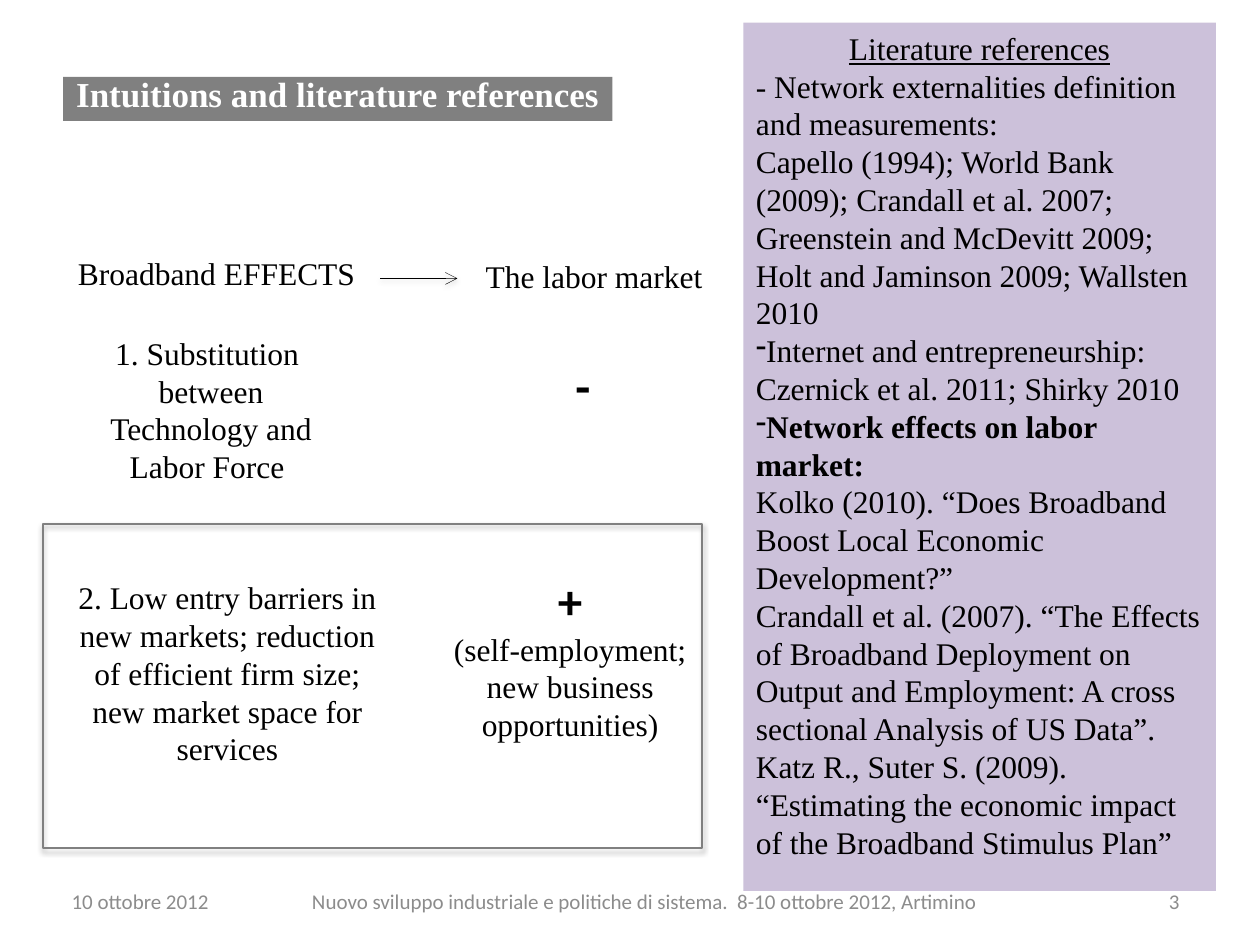
import lxml.etree
import pptx
import pptx.dml.color
import pptx.enum.shapes
import pptx.enum.text
import pptx.oxml.ns
import pptx.util

BLACK = pptx.dml.color.RGBColor(0x00, 0x00, 0x00)
WHITE = pptx.dml.color.RGBColor(0xFF, 0xFF, 0xFF)
GRAY = pptx.dml.color.RGBColor(0x80, 0x80, 0x80)
FOOTER_GRAY = pptx.dml.color.RGBColor(0x8C, 0x8C, 0x8C)
LILAC = pptx.dml.color.RGBColor(0xCC, 0xC1, 0xDA)

LEFT = pptx.enum.text.PP_ALIGN.LEFT
CENTER = pptx.enum.text.PP_ALIGN.CENTER
RIGHT = pptx.enum.text.PP_ALIGN.RIGHT
TOP = pptx.enum.text.MSO_ANCHOR.TOP
MIDDLE = pptx.enum.text.MSO_ANCHOR.MIDDLE
BOTTOM = pptx.enum.text.MSO_ANCHOR.BOTTOM
RECTANGLE = pptx.enum.shapes.MSO_SHAPE.RECTANGLE

BODY = {"name": "Times New Roman", "size": pptx.util.Pt(18), "color": BLACK}
TITLE = {**BODY, "size": pptx.util.Pt(20), "bold": True, "color": WHITE}
SIGN = {"name": "Calibri", "size": pptx.util.Pt(28), "bold": True, "color": BLACK}
FOOTER = {"name": "Calibri", "size": pptx.util.Pt(12), "color": FOOTER_GRAY}
HEADING = {**BODY, "underline": True}
STRONG = {**BODY, "bold": True}

presentation = pptx.Presentation()
presentation.slide_width = pptx.util.Inches(10)
presentation.slide_height = pptx.util.Inches(7.5)
column = presentation.slide_width / 100
row = presentation.slide_height / 75
slide = presentation.slides.add_slide(presentation.slide_layouts[5])


def place(left, top, width, height):
    return [round(left * column), round(top * row), round(width * column), round(height * row)]


def write(shape, paragraphs, alignment, anchor=TOP):
    frame = shape.text_frame
    frame.word_wrap = True
    frame.auto_size = pptx.enum.text.MSO_AUTO_SIZE.NONE
    frame.vertical_anchor = anchor
    for index, (text, style) in enumerate(paragraphs):
        paragraph = frame.add_paragraph() if index else frame.paragraphs[0]
        paragraph.alignment = alignment
        run = paragraph.add_run()
        run.text = text
        for name, value in style.items():
            if name == "color":
                run.font.color.rgb = value
            else:
                setattr(run.font, name, value)


title = slide.shapes.title
title.left, title.top, title.width, title.height = place(5, 6.1, 43.6, 3.5)
title.fill.solid()
title.fill.fore_color.rgb = GRAY
write(title, [("Intuitions and literature references ", TITLE)], CENTER, BOTTOM)

text_boxes = [
    (4.7, 69.5, 23.3, 4, LEFT, MIDDLE, [("10 ottobre 2012", FOOTER)]),
    (21.7, 69.5, 58.9, 4, CENTER, MIDDLE,
     [("Nuovo sviluppo industriale e politiche di sistema.  8-10 ottobre 2012, Artimino", FOOTER)]),
    (71.3, 69.5, 23.3, 4, RIGHT, MIDDLE, [("3", FOOTER)]),
    (5.2, 19.7, 26.9, 4, LEFT, TOP, [("Broadband EFFECTS", BODY)]),
    (33.7, 19.9, 26.9, 4, CENTER, TOP, [("The labor market", BODY)]),
    (7.5, 26, 18.5, 13.1, CENTER, TOP,
     [("1. Substitution  between", BODY), ("Technology and Labor Force ", BODY)]),
    (34.3, 27.7, 23.9, 5.7, CENTER, TOP, [("-", SIGN)]),
    (5.1, 45.4, 25.9, 16.2, CENTER, TOP,
     [("2. Low entry barriers in new markets; reduction of efficient firm size;", BODY),
      ("new market space for services", BODY)]),
    (33.3, 44.8, 23.9, 14.8, CENTER, TOP,
     [("+", SIGN), ("(self-employment; new business opportunities)", BODY)]),
]
for left, top, width, height, alignment, anchor, paragraphs in text_boxes:
    text_box = slide.shapes.add_textbox(*place(left, top, width, height))
    write(text_box, paragraphs, alignment, anchor)

start_x, start_y, length, rise = place(30.2, 22.1, 6.1, 0)
arrow = slide.shapes.add_connector(
    pptx.enum.shapes.MSO_CONNECTOR.STRAIGHT, start_x, start_y, start_x + length, start_y + rise)
arrow.line.color.rgb = BLACK
arrow.line.width = pptx.util.Pt(0.25)
lxml.etree.SubElement(arrow.line._get_or_add_ln(), pptx.oxml.ns.qn("a:tailEnd"), type="arrow")

effect_box = slide.shapes.add_shape(RECTANGLE, *place(3.4, 41.6, 52.3, 25.7))
effect_box.fill.background()
effect_box.line.color.rgb = GRAY
effect_box.line.width = pptx.util.Pt(1)

for shape, distance, opacity in [(arrow, 1.6, 38), (effect_box, 1.8, 35)]:
    effects = lxml.etree.SubElement(shape._element.spPr, pptx.oxml.ns.qn("a:effectLst"))
    shadow = lxml.etree.SubElement(
        effects, pptx.oxml.ns.qn("a:outerShdw"), blurRad=str(pptx.util.Pt(3.1)),
        dist=str(pptx.util.Pt(distance)), dir="5400000", rotWithShape="0")
    color = lxml.etree.SubElement(shadow, pptx.oxml.ns.qn("a:srgbClr"), val=str(BLACK))
    lxml.etree.SubElement(color, pptx.oxml.ns.qn("a:alpha"), val=str(opacity * 1000))

references = slide.shapes.add_shape(RECTANGLE, *place(59, 1.8, 37.5, 68.9))
references.shadow.inherit = False
references.fill.solid()
references.fill.fore_color.rgb = LILAC
references.line.fill.background()
write(references, [
    ("Literature references", HEADING),
    ("- Network externalities definition and measurements:", BODY),
    ("Capello (1994); World Bank (2009); Crandall et al. 2007; Greenstein and McDevitt 2009; "
     "Holt and Jaminson 2009; Wallsten 2010", BODY),
    ("Internet and entrepreneurship:", BODY),
    ("Czernick et al. 2011; Shirky 2010", BODY),
    ("Network effects on labor market:", STRONG),
    ("Kolko (2010). “Does Broadband Boost Local Economic Development?”", BODY),
    ("Crandall et al. (2007). “The Effects of Broadband Deployment on Output and Employment: "
     "A cross sectional Analysis of US Data”.", BODY),
    ("Katz R., Suter S. (2009). “Estimating the economic impact of the Broadband Stimulus Plan”", BODY),
], LEFT)
reference_paragraphs = references.text_frame.paragraphs
reference_paragraphs[0].alignment = CENTER
for index in (3, 5):
    properties = reference_paragraphs[index]._p.get_or_add_pPr()
    lxml.etree.SubElement(properties, pptx.oxml.ns.qn("a:buFontTx"))
    lxml.etree.SubElement(properties, pptx.oxml.ns.qn("a:buChar"), char="-")

presentation.save("out.pptx")
